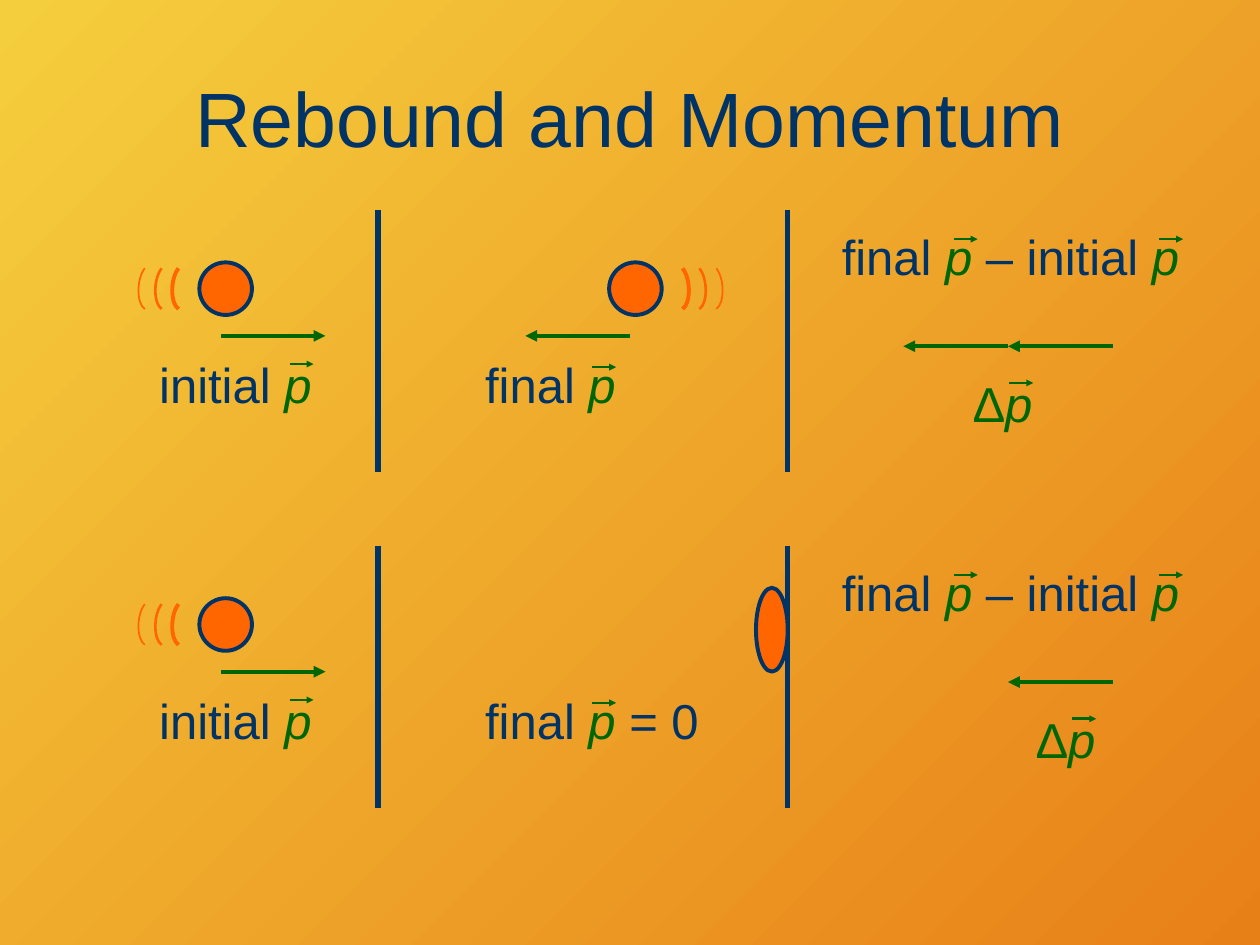
import dataclasses

import pptx
import pptx.dml.color
import pptx.enum.shapes
import pptx.enum.text
import pptx.oxml
import pptx.oxml.ns
import pptx.util

Cm = pptx.util.Cm
Pt = pptx.util.Pt
RGB = pptx.dml.color.RGBColor.from_string
qn = pptx.oxml.ns.qn
NS = pptx.oxml.ns.nsdecls("a")


@dataclasses.dataclass(frozen=True)
class Theme:
    font: str = "Arial"
    navy: str = "003366"
    green: str = "006600"
    orange: str = "FF6600"
    bg_start: str = "F5CE3D"
    bg_end: str = "E88018"
    title_size: int = 44
    label_size: int = 28
    wall_line: float = 3
    main_line: float = 2.25
    vector_line: float = 1.5
    motion_lines: tuple = (2.25, 1.5, 1)


class Painter:
    """Draws on one slide in a given theme; all lengths are centimetres."""

    def __init__(self, slide, theme):
        self.s = slide
        self.theme = theme

    def background(self):
        fill = self.s.background.fill
        fill.gradient()
        fill.gradient_angle = 315
        colors = (self.theme.bg_start, self.theme.bg_end)
        for stop, color in zip(fill.gradient_stops, colors):
            stop.color.rgb = RGB(color)

    def font(self, r, size, color, italic=False):
        r.font.name = self.theme.font
        r.font.size = Pt(size)
        r.font.color.rgb = RGB(color)
        r.font.italic = italic

    def title(self, text, x, y, w, h):
        sp = self.s.shapes.title
        sp.left, sp.top, sp.width, sp.height = Cm(x), Cm(y), Cm(w), Cm(h)
        tf = sp.text_frame
        tf.text = text
        tf.vertical_anchor = pptx.enum.text.MSO_ANCHOR.MIDDLE
        p = tf.paragraphs[0]
        p.alignment = pptx.enum.text.PP_ALIGN.CENTER
        self.font(p.runs[0], self.theme.title_size, self.theme.navy)

    def line(self, x1, y1, x2, y2, color, width, head=None):
        """Draw a straight line; head is the arrowhead size, 'sm' or 'med'."""
        sp = self.s.shapes.add_connector(
            pptx.enum.shapes.MSO_CONNECTOR.STRAIGHT, Cm(x1), Cm(y1), Cm(x2), Cm(y2))
        sp.line.color.rgb = RGB(color)
        sp.line.width = Pt(width)
        spPr = sp._element.spPr
        if head:
            spPr.find(qn("a:ln")).append(pptx.oxml.parse_xml(
                f'<a:tailEnd {NS} type="triangle" w="{head}" len="{head}"/>'))
        spPr.append(pptx.oxml.parse_xml(f"<a:effectLst {NS}/>"))

    def wall(self, x, y):
        self.line(x, y, x, y + 5.29, self.theme.navy, self.theme.wall_line)

    def arrow(self, x, y, length):
        """Draw a momentum arrow; a negative length points left."""
        self.line(x, y, x + length, y, self.theme.green, self.theme.main_line, "med")

    def ball(self, x, y, w=1.06, h=1.06):
        sp = self.s.shapes.add_shape(
            pptx.enum.shapes.MSO_SHAPE.OVAL, Cm(x), Cm(y), Cm(w), Cm(h))
        sp.shadow.inherit = False
        sp.fill.solid()
        sp.fill.fore_color.rgb = RGB(self.theme.orange)
        sp.line.color.rgb = RGB(self.theme.navy)
        sp.line.width = Pt(self.theme.main_line)

    def arc(self, x, y, depth, height, width):
        """Draw one Bézier arc from (x, y) straight down, bulging by depth."""
        builder = self.s.shapes.build_freeform(Cm(x), Cm(y))
        controls = [(x + depth, y + height * 0.25), (x + depth, y + height * 0.87)]
        builder.add_line_segments(
            [(Cm(px), Cm(py)) for px, py in controls + [(x, y + height)]], close=False)
        sp = builder.convert_to_shape()
        curve = pptx.oxml.parse_xml(f"<a:cubicBezTo {NS}/>")
        segments = list(sp._element.iter(qn("a:lnTo")))
        segments[0].addprevious(curve)
        for segment in segments:
            curve.append(segment[0])
            segment.getparent().remove(segment)
        sp.shadow.inherit = False
        sp.fill.background()
        sp.line.color.rgb = RGB(self.theme.orange)
        sp.line.width = Pt(width)

    def motion_marks(self, x, y, side):
        """Draw three arcs fading away from x: side -1 to the left, 1 to the right."""
        for i, width in enumerate(self.theme.motion_lines):
            self.arc(x + side * 0.34 * i, y, side * 0.17, 0.82, width)

    def label(self, text, x, y, w, vectors, drop, color=None, centred=False):
        """Write text whose |marked| parts are vector symbols, with small arrows above.

        vectors are the arrows' offsets from x, drop is their offset from y.
        """
        sp = self.s.shapes.add_textbox(Cm(x), Cm(y), Cm(w), Cm(1.45))
        tf = sp.text_frame
        tf.word_wrap = True
        tf.auto_size = pptx.enum.text.MSO_AUTO_SIZE.SHAPE_TO_FIT_TEXT
        p = tf.paragraphs[0]
        if centred:
            p.alignment = pptx.enum.text.PP_ALIGN.CENTER
        for i, part in enumerate(filter(None, text.split("|"))):
            r = p.add_run()
            r.text = part
            symbol = i % 2 == 1
            self.font(r, self.theme.label_size,
                      self.theme.green if symbol else color or self.theme.navy, symbol)
        for dx in vectors:
            self.line(x + dx, y + drop, x + dx + 0.48, y + drop,
                      self.theme.green, self.theme.vector_line, "sm")


def draw_before(painter, top):
    painter.wall(7.62, top)
    painter.ball(4.02, top + 1.06)
    painter.motion_marks(3.6, top + 1.18, -1)
    painter.arrow(4.45, top + 2.54, 2.11)
    painter.label("initial |p|", 2.96, top + 2.8, 4.02, [2.88], 0.31)


def draw_change(painter, top, arrows, delta_x):
    """Draw the momentum difference, its arrows head to tail, and the delta label."""
    painter.label("final |p| – initial |p|", 16.72, top + 0.21, 7.41, [6.65, 2.51], 0.38)
    for i in range(arrows):
        painter.arrow(22.43 - 2.11 * i, top + 2.75, -2.11)
    painter.label("Δ|p|", delta_x, top + 3.18, 1.9, [1.09], 0.31,
                  painter.theme.green, centred=True)


def main():
    prs = pptx.Presentation()
    prs.slide_width, prs.slide_height = Cm(25.4), Cm(19.05)
    painter = Painter(prs.slides.add_slide(prs.slide_layouts[5]), Theme())
    painter.background()
    painter.title("Rebound and Momentum", 1.27, 0.76, 22.86, 3.18)

    bounce_top, stick_top = 4.23, 11.0
    for top, arrows, delta_x in ((bounce_top, 2, 19.26), (stick_top, 1, 20.53)):
        draw_before(painter, top)
        painter.wall(15.88, top)
        draw_change(painter, top, arrows, delta_x)

    painter.ball(12.28, bounce_top + 1.06)
    painter.motion_marks(13.76, bounce_top + 1.18, 1)
    painter.arrow(12.7, bounce_top + 2.54, -2.11)
    painter.label("final |p|", 9.53, bounce_top + 2.8, 4.02, [2.41], 0.37)

    painter.ball(15.24, stick_top + 0.85, 0.64, 1.69)
    painter.label("final |p |= 0", 9.53, stick_top + 2.8, 4.87, [2.41], 0.37)
    prs.save("out.pptx")


if __name__ == "__main__":
    main()
